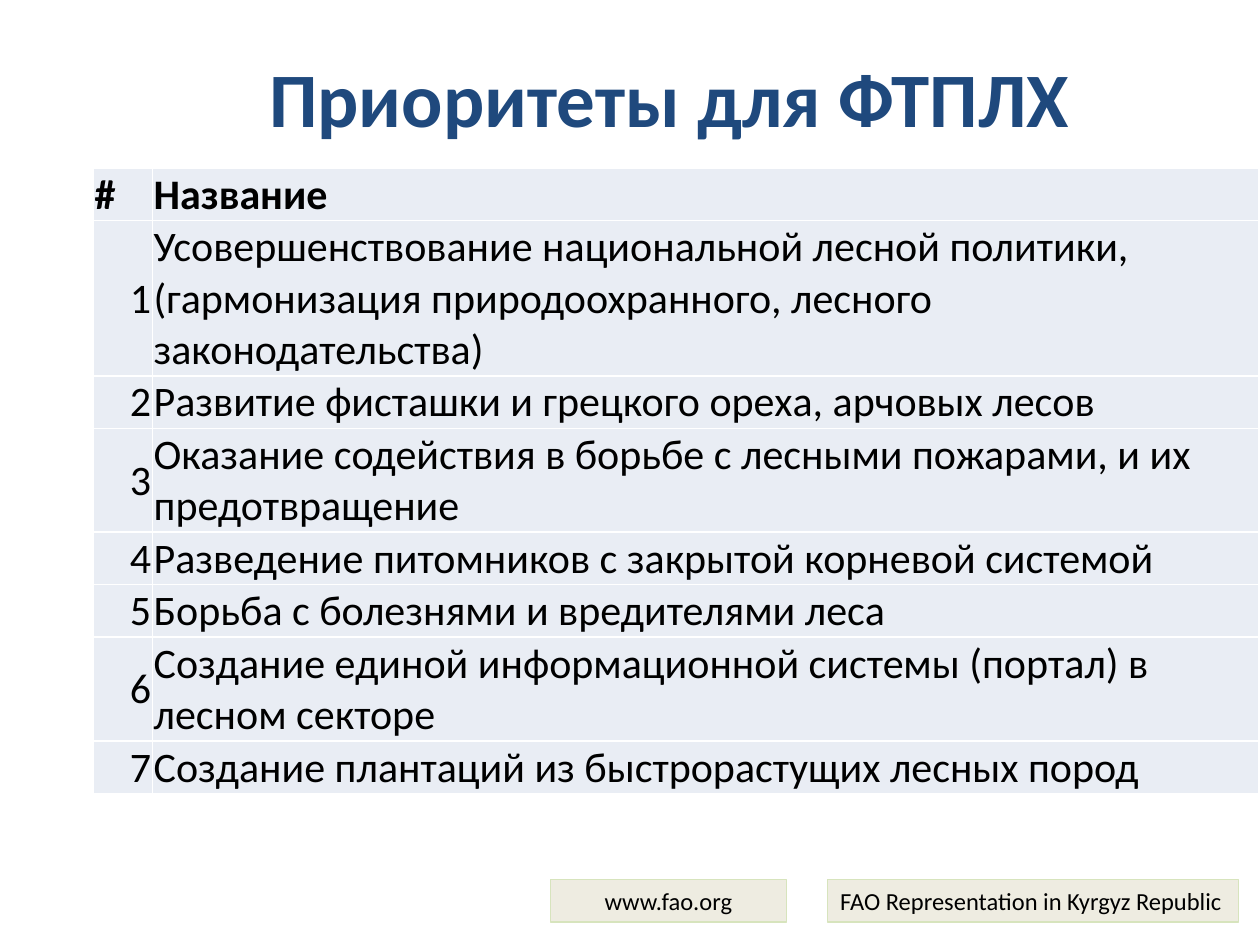
from typing import NamedTuple

from lxml.etree import SubElement
from pptx import Presentation
from pptx.dml.color import RGBColor
from pptx.enum.shapes import MSO_SHAPE
from pptx.enum.text import MSO_ANCHOR, PP_ALIGN
from pptx.oxml.ns import qn
from pptx.util import Inches, Pt

SLIDE_W, SLIDE_H = Inches(10), Inches(7.5)
WHITE = RGBColor(0xFF, 0xFF, 0xFF)
BLACK = RGBColor(0x00, 0x00, 0x00)
NAVY = RGBColor(0x1F, 0x49, 0x7D)
CREAM = RGBColor(0xEE, 0xEC, 0xE1)
GREEN = RGBColor(0xD7, 0xE4, 0xBD)
PALE = RGBColor(0xE9, 0xED, 0xF4)


class Box(NamedTuple):
    """A filled text box; lengths are percent of the slide's size."""
    text: str
    x: float
    y: float
    w: float
    h: float
    fill: RGBColor
    line: RGBColor | None
    align: PP_ALIGN
    wrap: bool
    font: dict


class Row(NamedTuple):
    """A table row; lines is the number of text lines it holds."""
    number: str
    title: str
    lines: int = 1


FOOTER = {"size": Pt(14), "color": BLACK}
FOOTER_Y, FOOTER_H = 93.05, 4.53
BOXES = [
    Box("www.fao.org", 43.7, FOOTER_Y, 18.7, FOOTER_H, CREAM, GREEN,
        PP_ALIGN.CENTER, True, FOOTER),
    Box("FAO Representation in Kyrgyz Republic", 65.7, FOOTER_Y, 32.6, FOOTER_H,
        CREAM, GREEN, PP_ALIGN.LEFT, False, FOOTER),
    Box("Приоритеты для ФТПЛХ", 7.5, 4.4, 91.3, 11.6, WHITE, None,
        PP_ALIGN.CENTER, True, {"size": Pt(44), "color": NAVY, "bold": True}),
]
ROWS = [
    Row("#", "Название"),
    Row("1", "Усовершенствование национальной лесной политики, "
        "(гармонизация природоохранного, лесного законодательства)", 3),
    Row("2", "Развитие фисташки и грецкого ореха, арчовых лесов"),
    Row("3", "Оказание содействия в борьбе с лесными пожарами, и их предотвращение", 2),
    Row("4", "Разведение питомников с закрытой корневой системой"),
    Row("5", "Борьба с болезнями и вредителями леса"),
    Row("6", "Создание единой информационной системы (портал) в лесном секторе", 2),
    Row("7", "Создание плантаций из быстрорастущих лесных пород"),
]
TABLE_X, TABLE_Y = 7.4, 17.8
COL_WIDTHS = (4.7, 87.8)
LINE_H = 5.47


def across(share: float) -> int:
    return round(SLIDE_W * share / 100)


def down(share: float) -> int:
    return round(SLIDE_H * share / 100)


def write(p, text: str, align: PP_ALIGN, fmt: dict) -> None:
    p.alignment = align
    r = p.add_run()
    r.text = text
    for name, value in {"name": "Calibri", **fmt}.items():
        if name == "color":
            r.font.color.rgb = value
        else:
            setattr(r.font, name, value)


def draw_box(s, box: Box) -> None:
    sp = s.shapes.add_shape(MSO_SHAPE.RECTANGLE, across(box.x), down(box.y),
                            across(box.w), down(box.h))
    sp.shadow.inherit = False
    sp.fill.solid()
    sp.fill.fore_color.rgb = box.fill
    if box.line is None:
        sp.line.fill.background()
    else:
        sp.line.color.rgb = box.line
        sp.line.width = Pt(0.75)
    tf = sp.text_frame
    tf.word_wrap = box.wrap
    tf.vertical_anchor = MSO_ANCHOR.MIDDLE
    write(tf.paragraphs[0], box.text, box.align, box.font)


def set_borders(cell, color: RGBColor) -> None:
    tc_pr = cell._tc.get_or_add_tcPr()
    for i, side in enumerate(("lnL", "lnR", "lnT", "lnB")):
        ln = SubElement(tc_pr, qn(f"a:{side}"), w=str(Pt(1)))
        SubElement(SubElement(ln, qn("a:solidFill")), qn("a:srgbClr"), val=str(color))
        tc_pr.insert(i, ln)


def draw_table(s, rows: list[Row]) -> None:
    height = LINE_H * sum(row.lines for row in rows)
    table = s.shapes.add_table(len(rows), len(COL_WIDTHS), across(TABLE_X), down(TABLE_Y),
                               across(sum(COL_WIDTHS)), down(height)).table
    for column, width in zip(table.columns, COL_WIDTHS):
        column.width = across(width)
    margins = {"margin_left": Inches(0.01), "margin_right": Inches(0.01),
               "margin_top": Inches(0.01), "margin_bottom": 0}
    for i, row in enumerate(rows):
        table.rows[i].height = down(LINE_H * row.lines)
        for j, text in enumerate((row.number, row.title)):
            cell = table.cell(i, j)
            header = i == 0
            for name, value in margins.items():
                setattr(cell, name, value)
            cell.vertical_anchor = MSO_ANCHOR.BOTTOM if header and j else MSO_ANCHOR.MIDDLE
            cell.fill.solid()
            cell.fill.fore_color.rgb = PALE
            set_borders(cell, WHITE)
            align = PP_ALIGN.LEFT if header or j else PP_ALIGN.RIGHT
            write(cell.text_frame.paragraphs[0], text, align,
                  {"size": Pt(24), "color": BLACK, "bold": header})


def main() -> None:
    prs = Presentation()
    prs.slide_width, prs.slide_height = SLIDE_W, SLIDE_H
    s = prs.slides.add_slide(prs.slide_layouts[6])
    # Footer labels and title
    for box in BOXES:
        draw_box(s, box)
    # Priorities
    draw_table(s, ROWS)
    prs.save("out.pptx")


if __name__ == "__main__":
    main()
